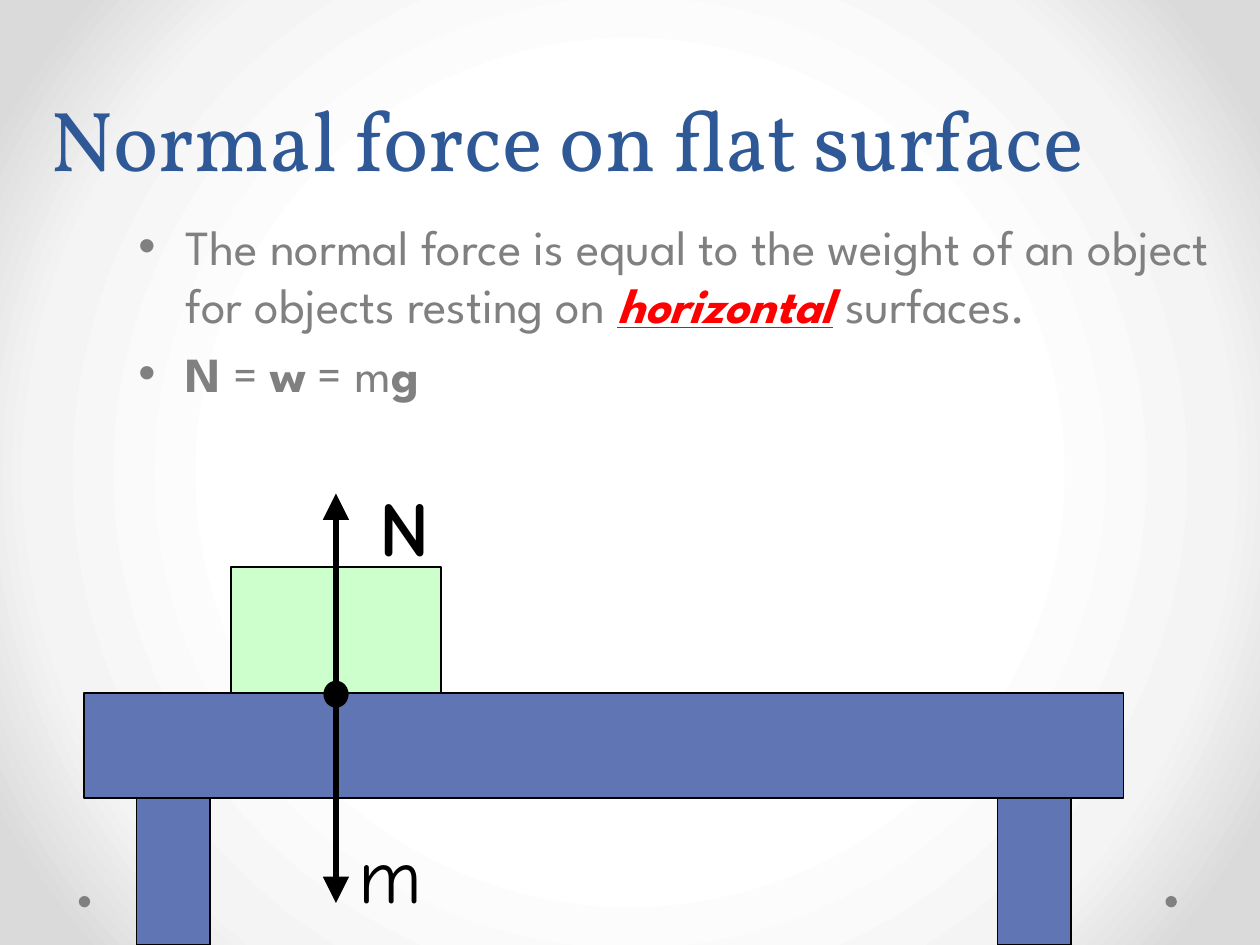
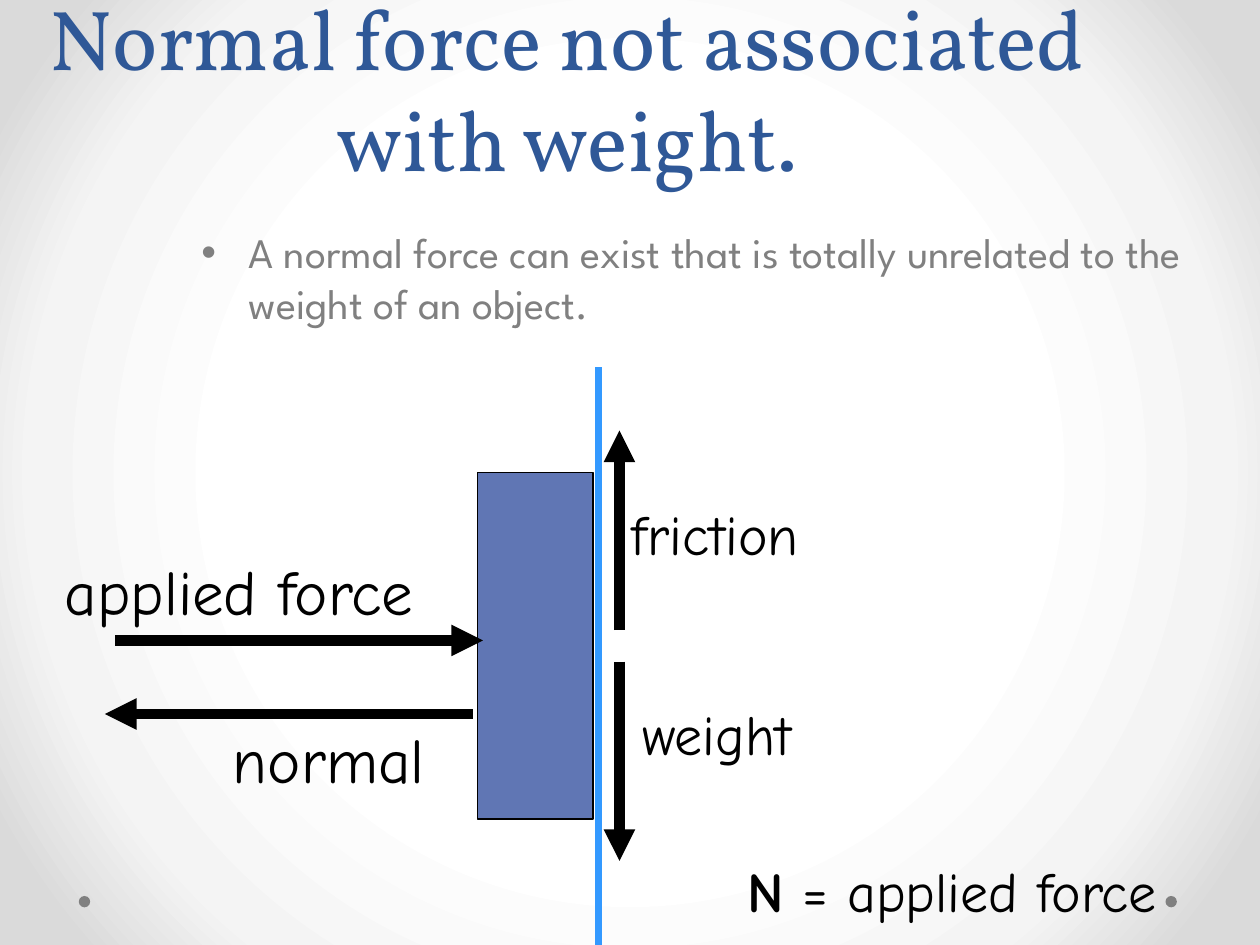
from pptx import Presentation
from pptx.dml.color import RGBColor
from pptx.enum import shapes, text
from pptx.oxml import parse_xml
from pptx.oxml.ns import nsdecls
from pptx.util import Pt

TITLE_BLUE = RGBColor(0x2F, 0x58, 0x97)
GREY = RGBColor(0x80, 0x80, 0x80)
BLUE = RGBColor(0x60, 0x76, 0xB4)
GREEN = RGBColor(0xCC, 0xFF, 0xCC)
WALL_BLUE = RGBColor(0x33, 0x99, 0xFF)
RED = RGBColor(0xFF, 0x00, 0x00)
BLACK = RGBColor(0x00, 0x00, 0x00)
TITLE_FONT, BODY_FONT, LABEL_FONT = "Vollkorn", "League Spartan", "Comic Neue"
RECTANGLE = shapes.MSO_SHAPE.RECTANGLE
OVAL = shapes.MSO_SHAPE.OVAL


def add_text(page, place, paragraphs, size, font, color):
    """Add a text box; each paragraph is a list of (wording, bold) spans."""
    box = page.shapes.add_textbox(*map(Pt, place))
    frame = box.text_frame
    frame.word_wrap = True
    for number, spans in enumerate(paragraphs):
        para = frame.paragraphs[0] if number == 0 else frame.add_paragraph()
        for wording, bold in spans:
            span = para.add_run()
            span.text = wording
            span.font.size = Pt(size)
            span.font.name = font
            span.font.bold = bold
            span.font.color.rgb = color
        if font == BODY_FONT:
            para.space_before = Pt(size * 0.2)
            properties = para._p.get_or_add_pPr()
            properties.set("marL", str(Pt(27)))
            properties.set("indent", str(Pt(-27)))
            for bullet in ('buFont {} typeface="Arial"', 'buChar {} char="•"'):
                properties.append(parse_xml(f'<a:{bullet.format(nsdecls("a"))}/>'))
    return box


def add_line(page, start, end, width, color=BLACK, head="med"):
    """Add a straight line; head is the arrowhead size, or None for no arrow."""
    line = page.shapes.add_connector(
        shapes.MSO_CONNECTOR.STRAIGHT, *map(Pt, start + end))
    line.line.width = Pt(width)
    line.line.color.rgb = color
    if head:
        line.line._get_or_add_ln().append(parse_xml(
            f'<a:tailEnd {nsdecls("a")} type="triangle" w="{head}" len="{head}"/>'))
    line._element.spPr.append(parse_xml(f'<a:effectLst {nsdecls("a")}/>'))
    return line


deck = Presentation()
deck.slide_width, deck.slide_height = Pt(720), Pt(540)

# Shared background: white centre fading to grey corners
stops = "".join(
    f'<a:gs pos="{percent * 1000}"><a:srgbClr val="{color}"/></a:gs>'
    for percent, color in [(50, "FFFFFF"), (76, "F4F4F4"), (92, "DADADA")])
background = parse_xml(
    f'<p:bg {nsdecls("p", "a")}><p:bgPr><a:gradFill rotWithShape="1">'
    f'<a:gsLst>{stops}</a:gsLst><a:path path="circle">'
    '<a:fillToRect l="50000" t="50000" r="50000" b="50000"/></a:path>'
    '</a:gradFill><a:effectLst/></p:bgPr></p:bg>')
master_content = deck.slide_master.element.cSld
for old_background in master_content.findall(background.tag):
    master_content.remove(old_background)
master_content.insert(0, background)

# Shared title style and corner dots
pages = []
for heading in ["Normal force on flat surface",
                "Normal force not associated with weight."]:
    page = deck.slides.add_slide(deck.slide_layouts[5])
    title = page.shapes.title
    title.left, title.top, title.width, title.height = map(Pt, (0, 21.6, 648, 90))
    frame = title.text_frame
    frame.text = heading
    frame.word_wrap = True
    frame.auto_size = text.MSO_AUTO_SIZE.NONE
    frame.vertical_anchor = text.MSO_ANCHOR.BOTTOM
    para = frame.paragraphs[0]
    para.alignment = text.PP_ALIGN.CENTER
    para.line_spacing = Pt(58)
    font = para.runs[0].font
    font.size, font.name = Pt(48.6), TITLE_FONT
    font.color.rgb = TITLE_BLUE
    for left in (666, 45):
        dot = page.shapes.add_shape(OVAL, *map(Pt, (left, 512, 6.5, 6.5)))
        dot.shadow.inherit = False
        dot.fill.solid()
        dot.fill.fore_color.rgb = GREY
        dot.line.fill.background()
    pages.append(page)
flat_page, wall_page = pages

# Explanations
statement = add_text(
    flat_page, (72, 120, 648, 324),
    [[("The normal force is equal to the weight of an object for objects resting on ", False),
      ("horizontal", True), (" surfaces.", False)],
     [("N", True), (" = ", False), ("w", True), (" = m", False), ("g", True)]],
    28, BODY_FONT, GREY)
emphasis = statement.text_frame.paragraphs[0].runs[1].font
emphasis.italic = emphasis.underline = True
emphasis.color.rgb = RED
add_text(
    wall_page, (108, 126, 612, 300),
    [[("A normal force can exist that is totally unrelated to the weight of an object.", False)]],
    24, BODY_FONT, GREY)

# Solid bodies, with the wall behind the pushed block
add_line(wall_page, (342, 210), (342, 540), 4.5, WALL_BLUE, head=None)
bodies = {}
for name, page, kind, place, color, outline in [
    ("table top", flat_page, RECTANGLE, (48, 396, 594, 60), BLUE, 1),
    ("left leg", flat_page, RECTANGLE, (78, 456, 42, 84), BLUE, 1),
    ("right leg", flat_page, RECTANGLE, (570, 456, 42, 84), BLUE, 1),
    ("resting block", flat_page, RECTANGLE, (132, 324, 120, 72), GREEN, 1),
    ("contact point", flat_page, OVAL, (185.3, 389.5, 13.4, 14.4), BLACK, 1),
    ("pushed block", wall_page, RECTANGLE, (273, 270, 66, 198), BLUE, 0.75),
]:
    body = page.shapes.add_shape(kind, *map(Pt, place))
    body.shadow.inherit = False
    body.fill.solid()
    body.fill.fore_color.rgb = color
    body.line.color.rgb = BLACK
    body.line.width = Pt(outline)
    bodies[name] = body

# Force arrows
for tip in (516, 282):
    force = add_line(flat_page, (192, 396), (192, tip), 3, head="lg")
    force.begin_connect(bodies["resting block"], 2)
for start, end in [
    ((66, 366), (276, 366)),
    ((270, 408), (60, 408)),
    ((354, 360), (354, 246)),
    ((354, 378), (354, 492)),
]:
    add_line(wall_page, start, end, 6)

# Force labels
for page, place, size, spans in [
    (flat_page, (198, 468.5, 72, 60), 44, [("m", False)]),
    (flat_page, (210, 270.5, 50, 60), 44, [("N", True)]),
    (wall_page, (30, 312, 235, 50), 36, [("applied force", False)]),
    (wall_page, (126, 408, 130, 50), 36, [("normal", False)]),
    (wall_page, (354, 282, 130, 45), 32, [("friction", False)]),
    (wall_page, (360, 396, 114, 45), 32, [("weight", False)]),
    (wall_page, (420, 486, 273, 45), 32, [("N", True), (" = applied force", False)]),
]:
    add_text(page, place, [spans], size, LABEL_FONT, BLACK)

deck.save("out.pptx")
